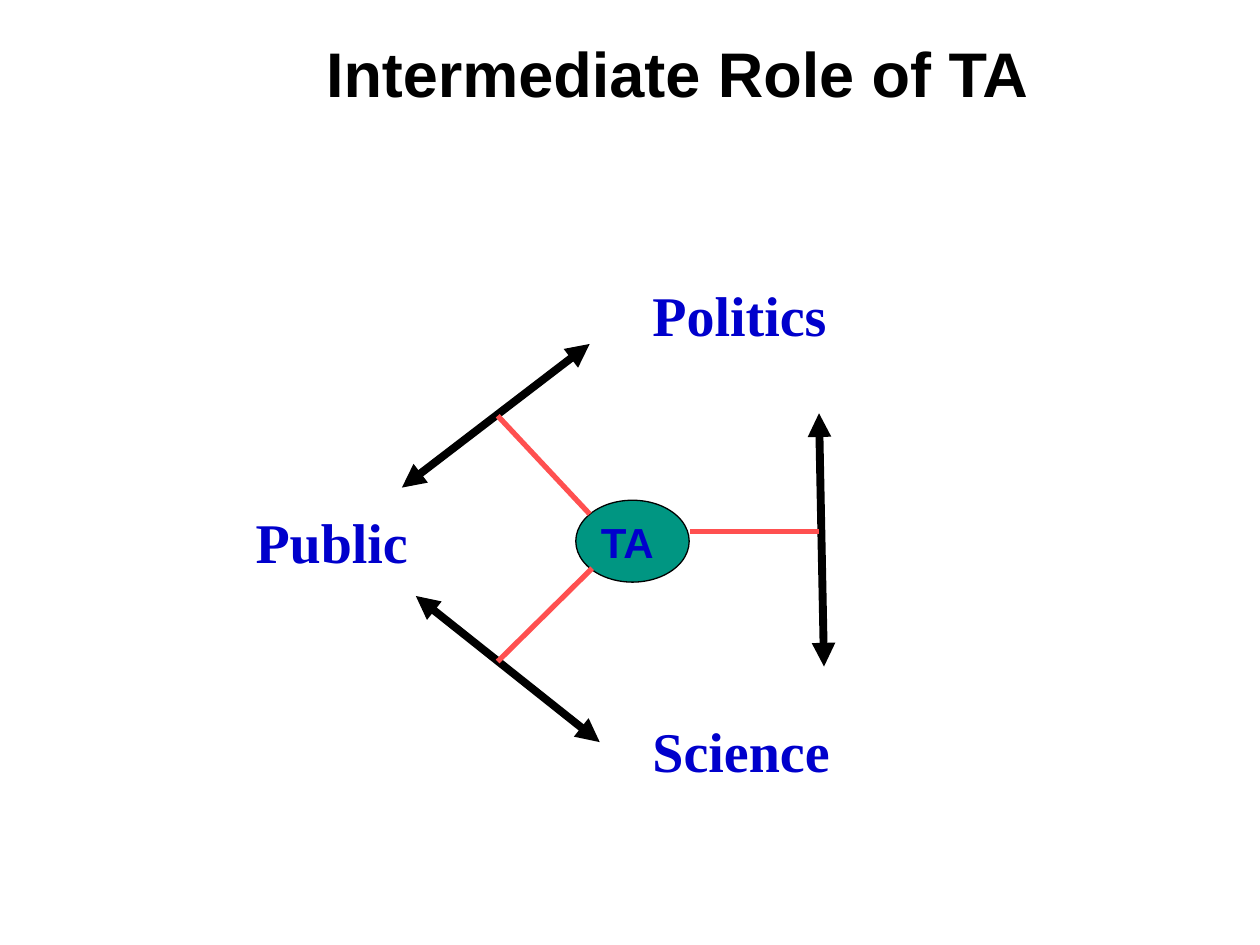
import lxml.etree
import pptx
import pptx.dml.color
import pptx.enum.shapes
import pptx.enum.text
import pptx.oxml.ns
import pptx.util

Inches = pptx.util.Inches
BLACK, BLUE, GREEN, RED = "000000", "0000CC", "009682", "FF5050"
TITLE_FONT = {"name": "Arial", "size": pptx.util.Pt(36), "bold": True}
ACTOR_FONT = {"name": "Times New Roman", "size": pptx.util.Pt(32), "bold": True}
CENTRE_FONT = {"name": "Arial", "size": pptx.util.Pt(24), "bold": True}
NO_MARGINS = dict.fromkeys(
    ("margin_left", "margin_top", "margin_right", "margin_bottom"), 0)


def rgb(value):
    return pptx.dml.color.RGBColor.from_string(value)


def set_attributes(target, values):
    for name, value in values.items():
        setattr(target, name, value)


def add_text(slide, text, box, font, color, alignment="LEFT", frame_format=None):
    shape = slide.shapes.add_textbox(*map(Inches, box))
    frame = shape.text_frame
    set_attributes(frame, {"word_wrap": True, **(frame_format or {})})
    paragraph = frame.paragraphs[0]
    paragraph.text = text
    paragraph.alignment = getattr(pptx.enum.text.PP_ALIGN, alignment)
    set_attributes(paragraph.font, font)
    paragraph.font.color.rgb = rgb(color)


def add_line(slide, start, end, color, width, arrows=False):
    """Draw a straight line, with a triangle at both ends if arrows is set."""
    connector = slide.shapes.add_connector(
        pptx.enum.shapes.MSO_CONNECTOR.STRAIGHT, *map(Inches, start + end))
    connector.line.color.rgb = rgb(color)
    connector.line.width = pptx.util.Pt(width)
    qualified = pptx.oxml.ns.qn
    if arrows:
        outline = connector.line._get_or_add_ln()
        for tag in ("a:headEnd", "a:tailEnd"):
            lxml.etree.SubElement(outline, qualified(tag), type="triangle")
    lxml.etree.SubElement(connector._element.spPr, qualified("a:effectLst"))


def add_ellipse(slide, box, fill, outline):
    shape = slide.shapes.add_shape(
        pptx.enum.shapes.MSO_SHAPE.OVAL, *map(Inches, box))
    shape.shadow.inherit = False
    shape.fill.solid()
    shape.fill.fore_color.rgb = rgb(fill)
    shape.line.color.rgb = rgb(outline)
    shape.line.width = pptx.util.Pt(0.75)


def main():
    presentation = pptx.Presentation()
    set_attributes(presentation,
                   {"slide_width": Inches(10), "slide_height": Inches(7.5)})
    slide = presentation.slides.add_slide(presentation.slide_layouts[6])

    add_text(slide, "Intermediate Role of TA", (1.28, 0.27, 8.19, 0.58),
             TITLE_FONT, BLACK, "CENTER", NO_MARGINS)

    actors = (("Science", 5.08, 5.64, 1.67),
              ("Politics", 5.08, 2.18, 1.75),
              ("Public", 1.93, 3.98, 1.57))
    for name, left, top, width in actors:
        add_text(slide, name, (left, top, width, 0.63), ACTOR_FONT, BLUE)

    exchanges = (((4.68, 2.73), (3.19, 3.87)),
                 ((3.3, 4.73), (4.76, 5.89)),
                 ((6.54, 5.29), (6.5, 3.28)))
    for start, end in exchanges:
        add_line(slide, start, end, BLACK, 4.5, arrows=True)

    add_ellipse(slide, (4.57, 3.97, 0.9, 0.65), GREEN, BLACK)
    add_text(slide, "TA", (4.67, 4.05, 1.05, 0.5), CENTRE_FONT, BLUE)

    links = (((4.7, 4.51), (3.95, 5.25)),
             ((4.68, 4.08), (3.95, 3.3)),
             ((5.48, 4.22), (6.5, 4.22)))
    for start, end in links:
        add_line(slide, start, end, RED, 3)

    presentation.save("out.pptx")


if __name__ == "__main__":
    main()
